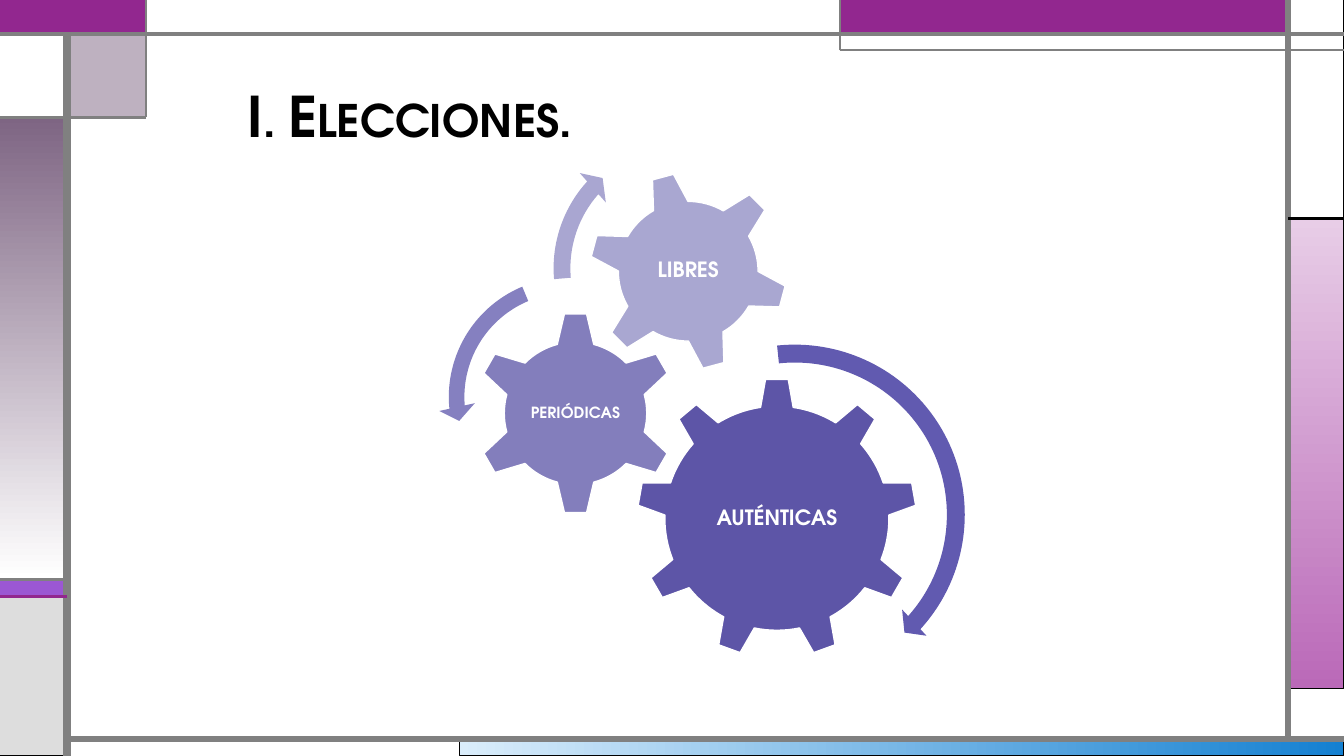
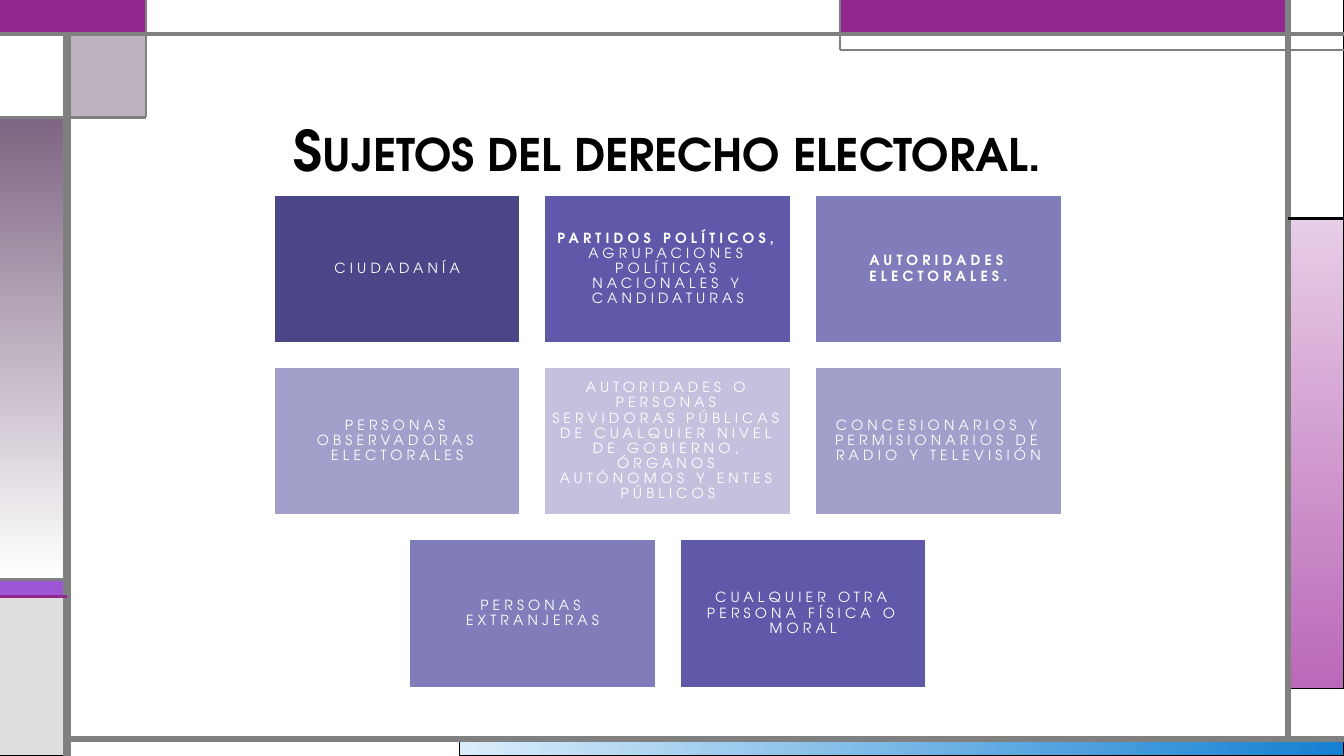
from dataclasses import dataclass

from pptx import Presentation
from pptx.dml.color import RGBColor
from pptx.enum.shapes import MSO_CONNECTOR, MSO_SHAPE
from pptx.enum.text import MSO_ANCHOR, PP_ALIGN
from pptx.oxml.ns import qn
from pptx.oxml.xmlchemy import OxmlElement
from pptx.util import Cm, Pt


@dataclass(frozen=True)
class Theme:
    font: str = "TeX Gyre Adventor"
    black: str = "000000"
    white: str = "FFFFFF"
    grey: str = "808080"
    silver: str = "DDDDDD"
    magenta: str = "92278F"
    violet: str = "9B57D3"
    indigo: str = "755DD9"
    mauve: str = "7E6583"
    blues: tuple = ("DAEDFB", "1480D1")
    pinks: tuple = ("E8CDE7", "BA69B8")
    gears: tuple = ("5D55A7", "837EBC", "A9A7D1")
    arrows: tuple = ("615AB0", "8580C0", "A9A6D1")
    tiles: tuple = ("4B4688", "6059A9", "817CBA", "A29FCB", "C3C1DD")
    title_size: int = 40
    gear_size: int = 15
    small_gear_size: int = 11
    tile_size: int = 10


T = Theme()
WIDTH, HEIGHT = 33.87, 19.05

# Frame grid, in cm
X_LEFT, X_TAB, X_BLUE, X_HEAD, X_RIGHT = 1.69, 3.67, 11.57, 21.17, 32.46
Y_TOP, Y_HEAD, Y_TAB, Y_PINK = 0.85, 1.27, 2.96, 5.5
Y_VIOLET, Y_SILVER, Y_PINK_END, Y_BOTTOM = 14.6, 15.03, 17.36, 18.63

# left, top, right, bottom, fill, extra format
PANELS = [
    (X_BLUE, Y_BOTTOM, WIDTH, HEIGHT, T.blues, {"angle": 0}),
    (X_RIGHT, Y_PINK, WIDTH, Y_PINK_END, T.pinks, {}),
    (0, Y_VIOLET, X_LEFT, Y_SILVER, T.violet, {}),
    (0, Y_SILVER, X_LEFT, HEIGHT, T.silver, {}),
    (X_RIGHT, 0, WIDTH, Y_PINK, T.white, {}),
    (X_HEAD, 0, X_RIGHT, Y_TOP, T.magenta, {"line": T.indigo}),
    (X_LEFT, Y_TOP, X_TAB, Y_TAB, T.mauve, {"alpha": 50}),
    (0, Y_TAB, X_LEFT, Y_VIOLET, (T.mauve, T.white), {}),
    (0, Y_TOP, X_LEFT, Y_TAB, T.white, {}),
    (0, 0, X_TAB, Y_TOP, T.magenta, {"line": T.magenta, "weight": 1.5}),
    (X_TAB, 0, X_HEAD, Y_TOP, T.white, {"line": T.grey}),
]
# from x, from y, to x, to y, colour, weight
RULES = [
    (X_LEFT, HEIGHT, X_LEFT, Y_TOP, T.grey, 6),
    (X_LEFT, Y_BOTTOM, WIDTH, Y_BOTTOM, T.grey, 4.5),
    (X_RIGHT, Y_BOTTOM, X_RIGHT, 0, T.grey, 4.5),
    (0, Y_TOP, WIDTH, Y_TOP, T.grey, 3),
    (WIDTH, Y_HEAD, X_HEAD, Y_HEAD, T.grey, 1.5),
    (X_HEAD, Y_HEAD, X_HEAD, 0, T.grey, 1.5),
    (X_RIGHT, Y_PINK, WIDTH, Y_PINK, T.black, 2.25),
    (X_TAB, 0, X_TAB, Y_TAB, T.grey, 1.5),
    (X_TAB, Y_TAB, 0, Y_TAB, T.grey, 2.25),
    (X_LEFT, Y_VIOLET, 0, Y_VIOLET, T.grey, 2.25),
    (X_LEFT, Y_SILVER, 0, Y_SILVER, T.magenta, 2.25),
]

# text, left, top, alignment
GEARS_TITLE = ("I. Elecciones.", 5.99, 2.34, PP_ALIGN.LEFT)
TILES_TITLE = ("Sujetos del derecho electoral.", 5.87, 3.18, PP_ALIGN.CENTER)
TITLE_W, TITLE_H = 21.89, 1.35

# label, preset, left, top, side, rotation, text size
GEARS = [
    ("AUTÉNTICAS", MSO_SHAPE.GEAR_9, 16.05, 9.53, 7.06, 0, T.gear_size),
    ("PERIÓDICAS", MSO_SHAPE.GEAR_6, 11.94, 7.85, 5.13, 0, T.small_gear_size),
    ("LIBRES", MSO_SHAPE.GEAR_6, 14.83, 4.32, 5.03, 345, T.gear_size),
]
LABEL_RATIO = 0.6
# preset, left, top, side, adjustments
ARROWS = [
    (MSO_SHAPE.CIRCULAR_ARROW, 15.52, 8.46, 9.02,
     (0.05, 2.99, 25.25, 158.42, 0.05)),
    (MSO_SHAPE.LEFT_CIRCULAR_ARROW, 11.05, 6.73, 6.55,
     (0.06, 4.3, 104.89, 148.38, 0.07)),
    (MSO_SHAPE.CIRCULAR_ARROW, 13.67, 3.23, 7.06,
     (0.06, 3.94, 133.14, 105.08, 0.07)),
]

# Rows of tiles: runs as (text, bold), index of the tile colour
TILE_ROWS = [
    [([("CIUDADANÍA", False)], 0),
     ([("PARTIDOS POLÍTICOS, ", True),
       ("AGRUPACIONES POLÍTICAS NACIONALES Y CANDIDATURAS", False)], 1),
     ([("AUTORIDADES ELECTORALES.", True)], 2)],
    [([("PERSONAS OBSERVADORAS ELECTORALES", False)], 3),
     ([("AUTORIDADES O PERSONAS SERVIDORAS PÚBLICAS DE CUALQUIER NIVEL DE "
        "GOBIERNO, ÓRGANOS AUTÓNOMOS Y ENTES PÚBLICOS", False)], 4),
     ([("CONCESIONARIOS Y PERMISIONARIOS DE RADIO Y TELEVISIÓN", False)], 3)],
    [([("PERSONAS EXTRANJERAS", False)], 2),
     ([("CUALQUIER OTRA PERSONA FÍSICA O MORAL", False)], 1)],
]
TILE_W, TILE_H, TILE_GAP = 6.2, 3.72, 0.62
TILES_CENTER, TILES_TOP = 16.83, 4.92


def rgb(color):
    return RGBColor.from_string(color)


def set_all(obj, values):
    for name, value in values.items():
        setattr(obj, name, value)


def add_shape(slide, preset, box, fill, line=None, weight=1, alpha=None, angle=270):
    """Add a preset shape; a tuple as fill makes a gradient."""
    sp = slide.shapes.add_shape(preset, *map(Cm, box))
    sp.shadow.inherit = False
    if isinstance(fill, tuple):
        sp.fill.gradient()
        sp.fill.gradient_angle = angle
        for stop, color in zip(sp.fill.gradient_stops, fill):
            stop.color.rgb = rgb(color)
    else:
        sp.fill.solid()
        sp.fill.fore_color.rgb = rgb(fill)
    if alpha:
        node = OxmlElement("a:alpha")
        node.set("val", str(alpha * 1000))
        sp.element.find(".//" + qn("a:srgbClr")).append(node)
    if line:
        sp.line.color.rgb = rgb(line)
        sp.line.width = Pt(weight)
    else:
        sp.line.fill.background()
    return sp


def add_rule(slide, x1, y1, x2, y2, color, weight):
    rule = slide.shapes.add_connector(MSO_CONNECTOR.STRAIGHT, *map(Cm, (x1, y1, x2, y2)))
    rule.line.color.rgb = rgb(color)
    rule.line.width = Pt(weight)
    rule.element.spPr.append(OxmlElement("a:effectLst"))
    return rule


def write(sp, runs, size, color=T.white, align=PP_ALIGN.CENTER, inset=None, **extra):
    """Fill one paragraph with (text, bold) runs; extra holds raw run attributes."""
    tf = sp.text_frame
    set_all(tf, {"word_wrap": True, "vertical_anchor": MSO_ANCHOR.MIDDLE})
    if inset is not None:
        sides = ("left", "top", "right", "bottom")
        set_all(tf, {f"margin_{side}": Cm(inset) for side in sides})
    p = tf.paragraphs[0]
    set_all(p, {"alignment": align, "line_spacing": 0.9})
    for text, bold in runs:
        r = p.add_run()
        r.text = text
        set_all(r.font, {"name": T.font, "size": Pt(size), "bold": bold})
        r.font.color.rgb = rgb(color)
        for name, value in extra.items():
            r._r.get_or_add_rPr().set(name, value)


def move_frame_to_layout(slide, layout):
    """Draw the frame on the slide, then hand it to the layout all slides share."""
    for ph in list(layout.placeholders):
        ph.element.getparent().remove(ph.element)
    frame = [
        add_shape(slide, MSO_SHAPE.RECTANGLE, (left, top, right - left, bottom - top),
                  fill, **{"line": T.black, "weight": 0.75, **extra})
        for left, top, right, bottom, fill, extra in PANELS
    ]
    frame += [add_rule(slide, *rule) for rule in RULES]
    for part in frame:
        layout.element.cSld.spTree.append(part.element)


def add_title(slide, text, left, top, align):
    box = slide.shapes.add_textbox(*map(Cm, (left, top, TITLE_W, TITLE_H)))
    write(box, [(text, True)], T.title_size, T.black, align, cap="small")


def build_gears(slide):
    add_title(slide, *GEARS_TITLE)
    for (label, preset, left, top, side, turn, size), color in zip(GEARS, T.gears):
        gear = add_shape(slide, preset, (left, top, side, side), color, T.white)
        gear.rotation = turn
        label_side = side * LABEL_RATIO
        margin = (side - label_side) / 2
        box = slide.shapes.add_textbox(
            *map(Cm, (left + margin, top + margin, label_side, label_side)))
        write(box, [(label, True)], size, inset=0.05)
    for (preset, left, top, side, adjustments), color in zip(ARROWS, T.arrows):
        arrow = add_shape(slide, preset, (left, top, side, side), color)
        for i, value in enumerate(adjustments):
            arrow.adjustments[i] = value


def build_tiles(slide):
    add_title(slide, *TILES_TITLE)
    for row, tiles in enumerate(TILE_ROWS):
        row_width = len(tiles) * (TILE_W + TILE_GAP) - TILE_GAP
        top = TILES_TOP + row * (TILE_H + TILE_GAP)
        for col, (runs, shade) in enumerate(tiles):
            left = TILES_CENTER - row_width / 2 + col * (TILE_W + TILE_GAP)
            tile = add_shape(slide, MSO_SHAPE.RECTANGLE, (left, top, TILE_W, TILE_H),
                             T.tiles[shade], T.white)
            write(tile, runs, T.tile_size, inset=0.1, spc="300")


def main():
    prs = Presentation()
    prs.slide_width, prs.slide_height = Cm(WIDTH), Cm(HEIGHT)
    blank = prs.slide_layouts[6]
    gears, tiles = (prs.slides.add_slide(blank) for _ in range(2))
    move_frame_to_layout(gears, blank)
    build_gears(gears)
    build_tiles(tiles)
    prs.save("out.pptx")


if __name__ == "__main__":
    main()
